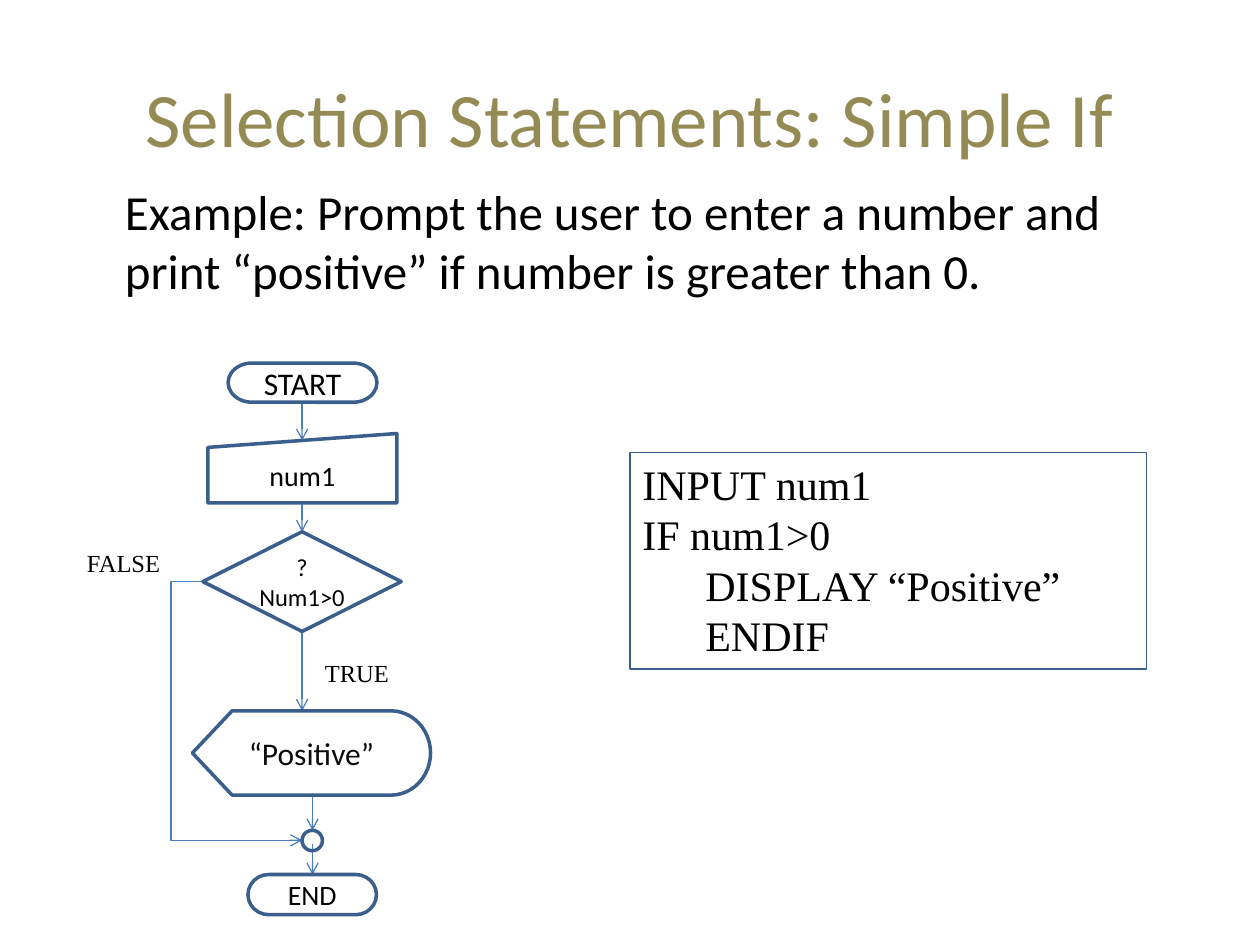
from pptx import Presentation
from pptx.dml.color import RGBColor
from pptx.enum.shapes import MSO_CONNECTOR as Connector, MSO_SHAPE as Shape
from pptx.enum.text import MSO_ANCHOR as Anchor, PP_ALIGN as Align
from pptx.oxml.ns import qn
from pptx.util import Cm, Pt
from lxml import etree

COLORS = {
    "title": "948A54",
    "text": "000000",
    "output": "0D0D0D",
    "outline": "3A5F8C",
    "arrow": "4B7EBC",
}
SANS, SERIF = "Calibri", "Times New Roman"


def add_run(paragraph, text, size, font=SANS, color="text"):
    run = paragraph.add_run()
    run.text = text
    run.font.size = Pt(size)
    run.font.name = font
    run.font.color.rgb = RGBColor.from_string(COLORS[color])


def add_text_box(slide, box, text, size, font=SANS, align=Align.LEFT):
    frame = slide.shapes.add_textbox(*map(Cm, box)).text_frame
    frame.word_wrap = True
    paragraph = frame.paragraphs[0]
    paragraph.alignment = align
    add_run(paragraph, text, size, font)
    return frame


def add_outlined_shape(slide, kind, box, line_width):
    shape = slide.shapes.add_shape(kind, *map(Cm, box))
    shape.shadow.inherit = False
    shape.fill.background()
    shape.line.color.rgb = RGBColor.from_string(COLORS["outline"])
    shape.line.width = Pt(line_width)
    shape.text_frame.word_wrap = True
    return shape


def add_arrow(slide, start, end, elbow=None):
    """Straight arrow, or a bent one whose turn lies at the fraction elbow of its width."""
    kind = Connector.STRAIGHT if elbow is None else Connector.ELBOW
    connector = slide.shapes.add_connector(kind, *map(Cm, (*start, *end)))
    connector.line.color.rgb = RGBColor.from_string(COLORS["arrow"])
    connector.line.width = Pt(0.75)
    properties = connector._element.spPr
    etree.SubElement(properties.find(qn("a:ln")), qn("a:tailEnd"), type="arrow")
    etree.SubElement(properties, qn("a:effectLst"))
    if elbow is not None:
        adjustments = properties.find(qn("a:prstGeom")).find(qn("a:avLst"))
        etree.SubElement(adjustments, qn("a:gd"), name="adj1",
                         fmla=f"val {round(elbow * 100000)}")


def add_title(slide, left, top, width, height):
    title = slide.shapes.title
    title.left, title.top, title.width, title.height = map(Cm, (left, top, width, height))
    title.text_frame.vertical_anchor = Anchor.MIDDLE
    paragraph = title.text_frame.paragraphs[0]
    paragraph.alignment = Align.CENTER
    add_run(paragraph, "Selection Statements: Simple If", 44, color="title")


def add_task(slide, left, top, width, height):
    frame = add_text_box(
        slide, (left, top, width, height),
        "Example: Prompt the user to enter a number and "
        "print “positive” if number is greater than 0.", 28)
    frame.margin_left = Cm(1.22)
    frame.paragraphs[0].space_before = Pt(5.6)


def add_flowchart(slide, left, top):
    def at(x, y):
        return left + x, top + y

    upper_axis, lower_axis = 5, 5.21
    arrows = [
        (upper_axis, 0.79, 1.56),
        (upper_axis, 2.82, 3.4),
        (upper_axis, 5.41, 7.01),
        (lower_axis, 8.71, 9.42),
        (lower_axis, 9.7, 10.31),
    ]
    for x, start, end in arrows:
        add_arrow(slide, at(x, start), at(x, end))
    add_arrow(slide, at(3, 4.41), at(5, 9.62), elbow=-0.32)

    steps = [
        (Shape.FLOWCHART_TERMINATOR, 3.51, 0, 3, 0.79, "START", 18, "text"),
        (Shape.FLOWCHART_MANUAL_INPUT, 3.1, 1.42, 3.81, 1.4, "num1", 16, "text"),
        (Shape.FLOWCHART_DECISION, 3, 3.4, 4, 2.01, "? Num1>0", 14, "text"),
        (Shape.FLOWCHART_DISPLAY, 2.79, 7.01, 4.8, 1.7, "“Positive”", 18, "output"),
        (Shape.FLOWCHART_CONNECTOR, 5, 9.42, 0.41, 0.41, None, None, None),
        (Shape.FLOWCHART_TERMINATOR, 3.91, 10.31, 2.59, 0.81, "END", 16, "text"),
    ]
    for kind, x, y, width, height, text, size, color in steps:
        shape = add_outlined_shape(slide, kind, (*at(x, y), width, height), 2)
        if text is None:
            continue
        frame = shape.text_frame
        frame.vertical_anchor = Anchor.MIDDLE
        if kind == Shape.FLOWCHART_DECISION:
            frame.margin_left = frame.margin_right = 0
            frame.margin_top = frame.margin_bottom = Cm(0.1)
        frame.paragraphs[0].alignment = Align.CENTER
        add_run(frame.paragraphs[0], text, size, color=color)

    add_text_box(slide, (*at(5.21, 5.82), 2.39, 0.86), "TRUE", 14, SERIF)
    add_text_box(slide, (*at(0, 3.61), 2.39, 0.86), "FALSE", 14, SERIF, Align.RIGHT)


def add_pseudocode(slide, left, top, width, height):
    shape = add_outlined_shape(slide, Shape.RECTANGLE, (left, top, width, height), 0.75)
    frame = shape.text_frame
    frame.vertical_anchor = Anchor.TOP
    lines = [("INPUT num1", 0), ("IF num1>0", 0), ("DISPLAY “Positive”", 1), ("ENDIF", 1)]
    for index, (text, level) in enumerate(lines):
        paragraph = frame.add_paragraph() if index else frame.paragraphs[0]
        paragraph.level = level
        paragraph.alignment = Align.LEFT
        add_run(paragraph, text, 24, SERIF)


def main():
    presentation = Presentation()
    presentation.slide_width, presentation.slide_height = Cm(25.4), Cm(19.05)
    slide = presentation.slides.add_slide(presentation.slide_layouts.get_by_name("Title Only"))
    add_title(slide, 1.27, 0.76, 22.86, 3.18)
    add_task(slide, 1.3, 3.53, 22.86, 2.87)
    add_flowchart(slide, 1.09, 7.32)
    add_pseudocode(slide, 12.7, 9.12, 10.41, 4.37)
    presentation.save("out.pptx")


if __name__ == "__main__":
    main()
